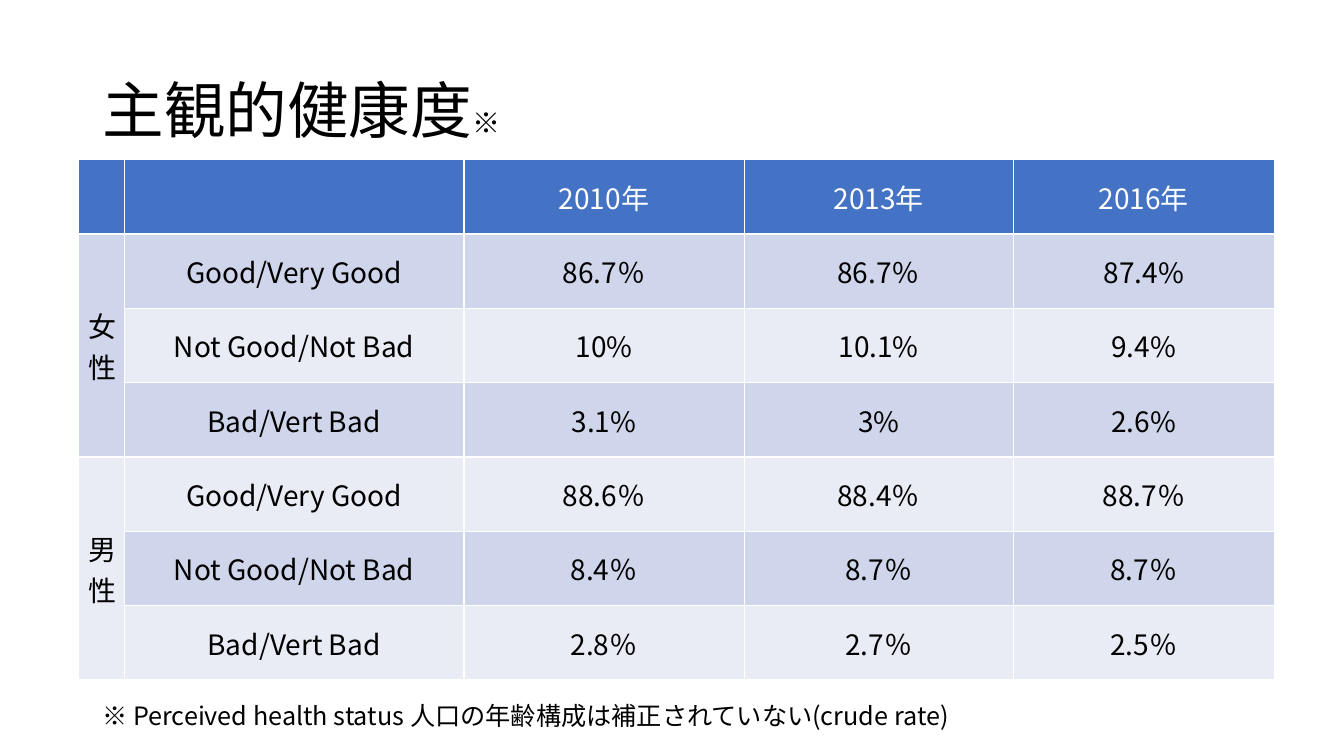
from lxml import etree
from pptx import Presentation
from pptx.dml.color import RGBColor
from pptx.enum import text
from pptx.oxml.ns import qn
from pptx.util import Pt

FONT = "Noto Sans CJK JP"
BLACK, WHITE = "000000", "FFFFFF"
HEADER_FILL = "4472C4"
BANDS = ["CFD5EA", "E9EBF5"]

COLUMN_WIDTHS = [33.1, 242.6, 200.2, 192.2, 186.5]
YEARS = ["2010年", "2013年", "2016年"]
RATINGS = ["Good/Very Good", "Not Good/Not Bad", "Bad/Vert Bad"]
RATES = {
    "女性": [
        ["86.7％", "86.7％", "87.4%"],
        ["10%", "10.1%", "9.4%"],
        ["3.1%", "3%", "2.6%"],
    ],
    "男性": [
        ["88.6％", "88.4％", "88.7％"],
        ["8.4％", "8.7％", "8.7％"],
        ["2.8％", "2.7％", "2.5％"],
    ],
}


def rgb(value):
    return RGBColor.from_string(value)


def format_run(r, size, color=BLACK):
    """Set size, colour and both the Latin and the East Asian font."""
    r.font.size = Pt(size)
    r.font.bold = False
    r.font.color.rgb = rgb(color)
    r.font.name = FONT
    ea = etree.SubElement(r.font._element, qn("a:ea"))
    ea.set("typeface", FONT)


def add_title(s, left, top, width, height):
    sp = s.shapes.title
    sp.left, sp.top, sp.width, sp.height = Pt(left), Pt(top), Pt(width), Pt(height)
    tf = sp.text_frame
    tf.word_wrap = True
    tf.auto_size = text.MSO_AUTO_SIZE.NONE
    tf.vertical_anchor = text.MSO_ANCHOR.MIDDLE
    p = tf.paragraphs[0]
    p.alignment = text.PP_ALIGN.LEFT
    p.line_spacing = 0.9
    for words, size in [("主観的健康度", 44), ("※", 20)]:
        r = p.add_run()
        r.text = words
        format_run(r, size)


def fill_cell(cell, words, fill, color=BLACK):
    cell.fill.solid()
    cell.fill.fore_color.rgb = rgb(fill)
    cell.vertical_anchor = text.MSO_ANCHOR.MIDDLE
    p = cell.text_frame.paragraphs[0]
    p.text = words
    p.alignment = text.PP_ALIGN.CENTER
    for r in p.runs:
        format_run(r, 20, color)


def add_health_table(s, left, top, width, height):
    """Each sex spans one row per rating, beside a column per year."""
    row_count = 1 + len(RATES) * len(RATINGS)
    table = s.shapes.add_table(row_count, len(COLUMN_WIDTHS),
                               Pt(left), Pt(top), Pt(width), Pt(height)).table
    for column, column_width in zip(table.columns, COLUMN_WIDTHS):
        column.width = Pt(column_width)
    for row in table.rows:
        row.height = Pt(height / row_count)

    for col, words in enumerate(["", ""] + YEARS):
        fill_cell(table.cell(0, col), words, HEADER_FILL, WHITE)

    for group, (sex, rates) in enumerate(RATES.items()):
        first = 1 + group * len(RATINGS)
        for row, (rating, values) in enumerate(zip(RATINGS, rates), first):
            label = sex if row == first else ""
            for col, words in enumerate([label, rating] + values):
                fill_cell(table.cell(row, col), words, BANDS[(row - 1) % 2])
        sex_cell = table.cell(first, 0)
        sex_cell.merge(table.cell(first + len(RATINGS) - 1, 0))
        sex_cell._tc.get_or_add_tcPr().set("vert", "eaVert")


def add_footnote(s, left, top, width, height):
    tf = s.shapes.add_textbox(Pt(left), Pt(top), Pt(width), Pt(height)).text_frame
    tf.word_wrap = True
    tf.auto_size = text.MSO_AUTO_SIZE.SHAPE_TO_FIT_TEXT
    tf.text = "※ Perceived health status 人口の年齢構成は補正されていない(crude rate)"
    format_run(tf.paragraphs[0].runs[0], 18)


def main():
    prs = Presentation()
    prs.slide_width, prs.slide_height = Pt(960), Pt(540)
    s = prs.slides.add_slide(prs.slide_layouts[5])
    add_title(s, 66, 28.75, 828, 104.4)
    add_health_table(s, 55.7, 114, sum(COLUMN_WIDTHS), 371.7)
    add_footnote(s, 66, 496.8, 867, 29.1)
    prs.save("out.pptx")


if __name__ == "__main__":
    main()
